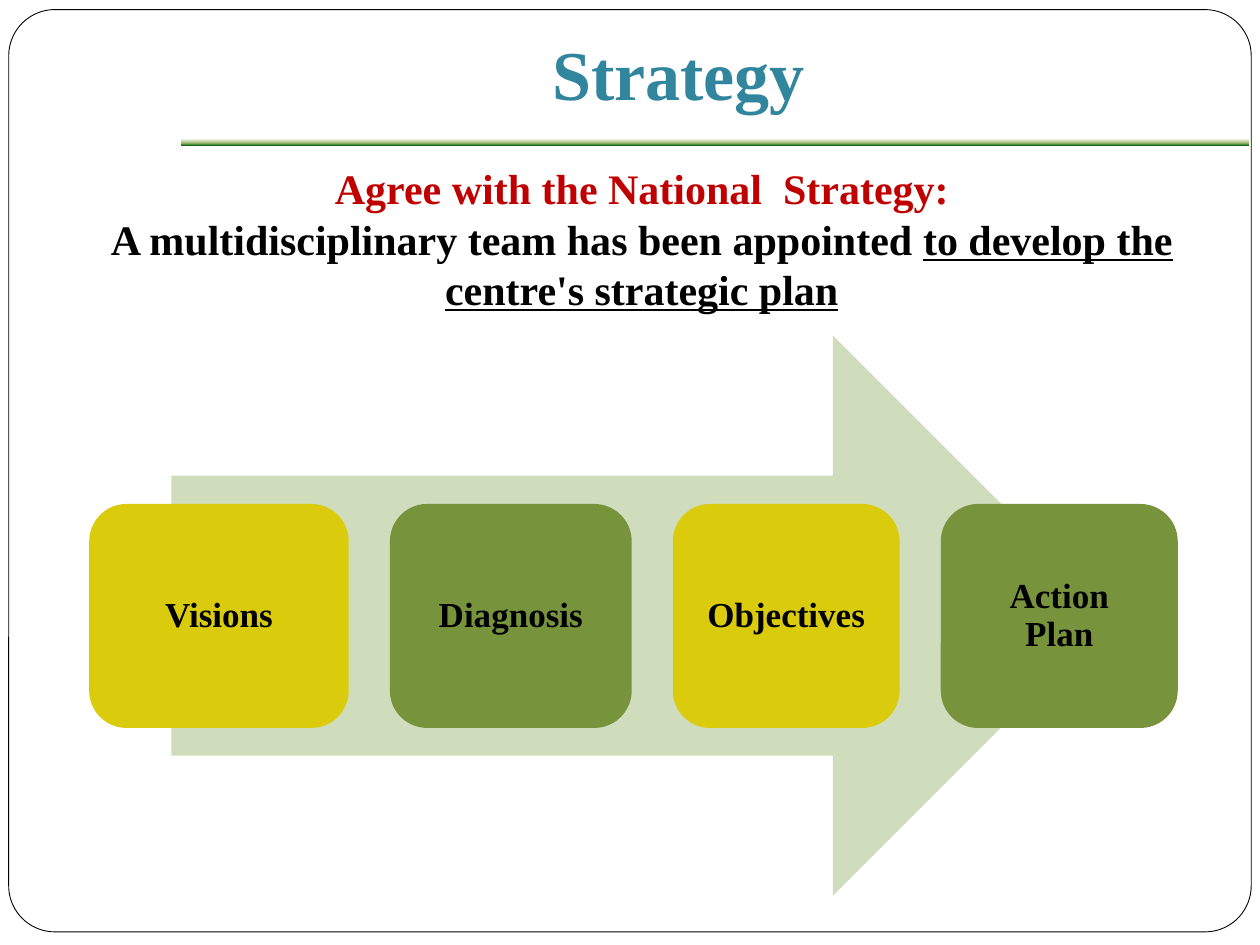
from pptx import Presentation
from pptx.dml.color import RGBColor
from pptx.enum import shapes, text
from pptx.oxml import parse_xml
from pptx.oxml.ns import nsdecls
from pptx.util import Pt

TEAL = RGBColor(0x31, 0x85, 0x9C)
RED = RGBColor(0xC0, 0x00, 0x00)
BLACK = RGBColor(0x00, 0x00, 0x00)
WHITE = RGBColor(0xFF, 0xFF, 0xFF)
YELLOW = RGBColor(0xDA, 0xCB, 0x0C)
GREEN = RGBColor(0x77, 0x93, 0x3C)
PALE_GREEN = RGBColor(0xD0, 0xDD, 0xBC)
SHAPE = shapes.MSO_SHAPE


def add_shape(kind, left, top, width, height, color=None):
    sp = s.shapes.add_shape(kind, Pt(left), Pt(top), Pt(width), Pt(height))
    sp.shadow.inherit = False
    sp.line.fill.background()
    if color is not None:
        sp.fill.solid()
        sp.fill.fore_color.rgb = color
    return sp


def add_run(p, words, size, color, **extra):
    r = p.add_run()
    r.text = words
    r.font.color.rgb = color
    formats = {"name": "Times New Roman", "size": Pt(size), "bold": True, **extra}
    for name, value in formats.items():
        setattr(r.font, name, value)
    p.alignment = text.PP_ALIGN.CENTER


prs = Presentation()
prs.slide_width, prs.slide_height = Pt(720), Pt(540)
s = prs.slides.add_slide(prs.slide_layouts[5])

# Frame, sent behind the title
frame = add_shape(SHAPE.ROUNDED_RECTANGLE, 5, 5.5, 710, 527, WHITE)
frame.adjustments[0] = 0.05
frame.line.color.rgb = BLACK
frame.line.width = Pt(0.5)
s.shapes.element.insert(2, frame.element)

# Title
title = s.shapes.title
title.left, title.top, title.width, title.height = Pt(106.5), Pt(9.5), Pt(562.5), Pt(67)
tf = title.text_frame
tf.vertical_anchor = text.MSO_ANCHOR.MIDDLE
tf.margin_bottom = Pt(7.2)
add_run(tf.paragraphs[0], "Strategy", 40, TEAL)

# Process arrow
add_shape(SHAPE.RIGHT_ARROW, 98, 191.8, 538, 320, PALE_GREEN)

# Steps, set side by side with an equal gap
steps = [
    ("Visions", 148.3, YELLOW),
    ("Diagnosis", 138.2, GREEN),
    ("Objectives", 129.6, YELLOW),
    ("Action Plan", 135.4, GREEN),
]
left, gap = 51, 23.5
for label, width, color in steps:
    sp = add_shape(SHAPE.ROUNDED_RECTANGLE, left, 288, width, 128, color)
    tf = sp.text_frame
    tf.word_wrap = True
    tf.vertical_anchor = text.MSO_ANCHOR.MIDDLE
    for side in ("left", "top", "right", "bottom"):
        setattr(tf, f"margin_{side}", Pt(12))
    p = tf.paragraphs[0]
    p.line_spacing = 0.9
    add_run(p, label, 20, BLACK)
    left += width + gap

# Gradient rule under the title
rule = add_shape(SHAPE.RECTANGLE, 103.5, 79.2, 610, 4)
rule.fill.gradient()
rule.fill.gradient_angle = 270
stops = rule.fill.gradient_stops
stops[0].color.rgb = WHITE
stops[1].color.rgb = RGBColor(0x15, 0x6B, 0x13)
middle = parse_xml(
    f'<a:gs {nsdecls("a")} pos="65000"><a:srgbClr val="9CB86E"/></a:gs>'
)
rule.element.spPr.find(".//{*}gsLst").insert(1, middle)

# Statement
box = s.shapes.add_textbox(Pt(38), Pt(89.5), Pt(657.5), Pt(124))
tf = box.text_frame
tf.word_wrap = True
add_run(tf.paragraphs[0], "Agree with the National  Strategy:", 24, RED)
p = tf.add_paragraph()
add_run(p, "A multidisciplinary team has been appointed ", 24, BLACK)
add_run(p, "to develop the centre's strategic plan", 24, BLACK, underline=True)

prs.save("out.pptx")
